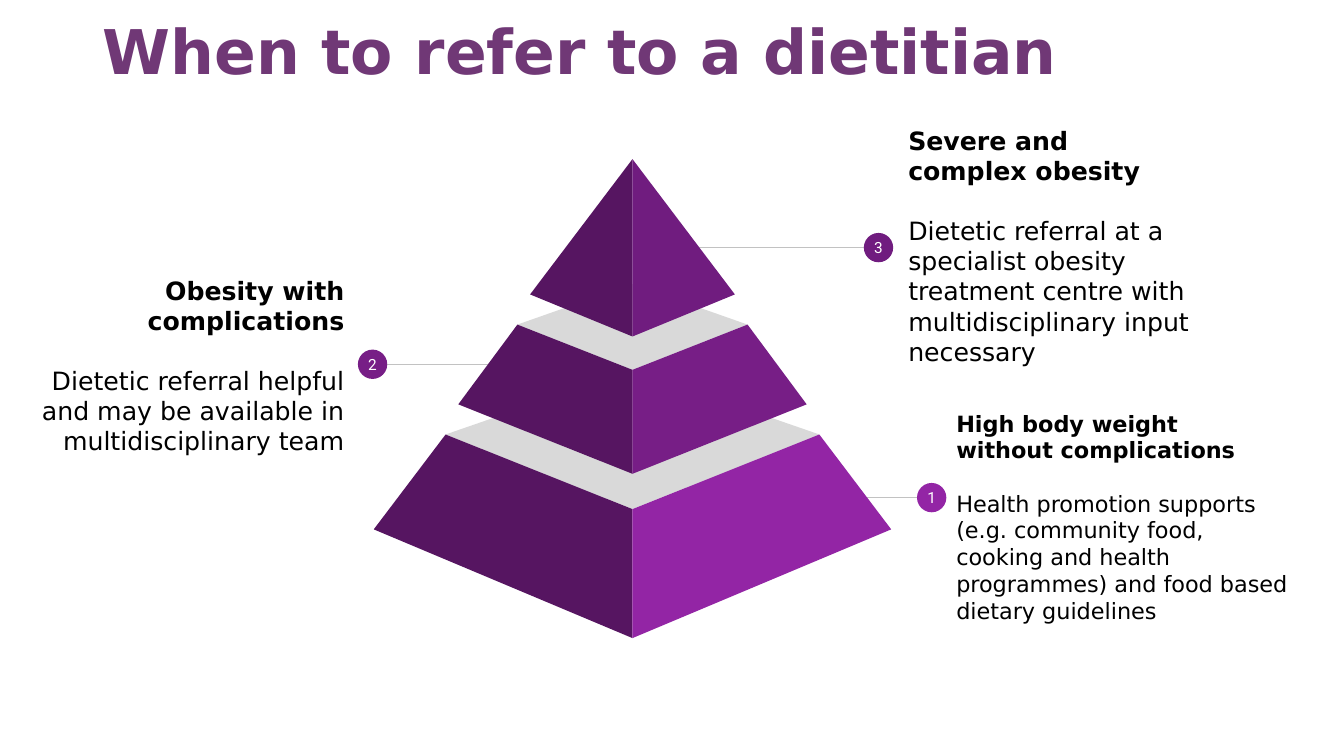
from lxml import etree
from pptx import Presentation
from pptx import util as u
from pptx.dml.color import RGBColor
from pptx.enum import shapes, text
from pptx.oxml import ns

LEFT, CENTER, RIGHT = text.PP_ALIGN.LEFT, text.PP_ALIGN.CENTER, text.PP_ALIGN.RIGHT
DARK, LID, RULE = "561561", "D9D9D9", "C2C2C2"
AXIS = 15.94  # vertical centre line of the pyramid, cm
DOT = 0.74  # diameter of a number marker, cm


def color(value):
    return RGBColor.from_string(value)


class SlideBuilder:
    body_font = "DejaVu Sans"
    number_font = "Roboto"

    def __init__(self, page):
        self.shapes = page.shapes

    def add_span(self, para, words, tone="000000", **font):
        span = para.add_run()
        span.text = words
        for key, value in {"name": self.body_font, **font}.items():
            setattr(span.font, key, value)
        span.font.color.rgb = color(tone)

    def frame(self, shape, inset_x, inset_y):
        """Set up a wrapping, vertically centred text frame."""
        box = shape.text_frame
        settings = {
            "word_wrap": True, "vertical_anchor": text.MSO_ANCHOR.MIDDLE,
            "margin_left": u.Cm(inset_x), "margin_right": u.Cm(inset_x),
            "margin_top": u.Cm(inset_y), "margin_bottom": u.Cm(inset_y),
        }
        for key, value in settings.items():
            setattr(box, key, value)
        return box

    def title(self, words, place):
        box = self.frame(self.shapes.add_textbox(*map(u.Cm, place)), 0.25, 0.13)
        para = box.paragraphs[0]
        para.line_spacing = 0.9
        self.add_span(para, words, "703876", size=u.Pt(44), bold=True)

    def label(self, heading, body, place, size, align):
        """Bold heading lines with one body paragraph a line below."""
        box = self.frame(self.shapes.add_textbox(*map(u.Cm, place)), 0.33, 0.33)
        for index, words in enumerate([*heading, body]):
            para = box.paragraphs[0] if index == 0 else box.add_paragraph()
            para.alignment = align
            is_body = index == len(heading)
            if is_body:
                para.space_before = u.Pt(size * 1.17)
            self.add_span(para, words, size=u.Pt(size), bold=not is_body)

    def line(self, start, end, y):
        rule = self.shapes.add_connector(
            shapes.MSO_CONNECTOR.STRAIGHT, u.Cm(start), u.Cm(y), u.Cm(end), u.Cm(y))
        rule.line.color.rgb = color(RULE)
        rule.line.width = u.Pt(0.75)
        etree.SubElement(rule._element.spPr, ns.qn("a:effectLst"))

    def paint(self, shape, tone):
        shape.shadow.inherit = False
        shape.fill.solid()
        shape.fill.fore_color.rgb = color(tone)
        shape.line.fill.background()

    def marker(self, number, left, top, tone):
        dot = self.shapes.add_shape(
            shapes.MSO_SHAPE.OVAL, *map(u.Cm, (left, top, DOT, DOT)))
        self.paint(dot, tone)
        box = self.frame(dot, 0, 0)
        box.word_wrap = False
        para = box.paragraphs[0]
        para.alignment = CENTER
        self.add_span(para, number, "FFFFFF", name=self.number_font, size=u.Pt(11))

    def polygon(self, points, tone):
        """Draw an outline from (offset from the axis, y) points."""
        corners = [(u.Cm(AXIS + x), u.Cm(y)) for x, y in points]
        outline = self.shapes.build_freeform(*corners[0], scale=1.0)
        outline.add_line_segments(corners[1:], close=True)
        self.paint(outline.convert_to_shape(), tone)

    def tier(self, shoulder, foot, front, inner, back, tone):
        """Draw a pyramid tier: grey lid if it has a back, then both faces."""
        x, y = shoulder
        if back is not None:
            self.polygon([(-x, y), (0, inner), (x, y), (0, back)], LID)
        for side, face in ((-1, DARK), (1, tone)):
            edge = [(side * x, y), (side * foot[0], foot[1]), (0, front)]
            if back is not None:
                edge.append((0, inner))
            self.polygon(edge, face)


# number, tone, marker left and top, line start and end, label place, size, align, texts
STAGES = [
    ("1", "9325A5", (23.11, 12.17), (21.69, 23.85), (23.77, 10.46, 9.17, 5.13), 16, LEFT,
     ["High body weight", "without complications"],
     "Health promotion supports (e.g. community food, cooking and health "
     "programmes) and food based dietary guidelines"),
    ("2", "771E86", (9.02, 8.81), (13.11, 9.25), (0.25, 6.65, 8.76, 5.13), 18, RIGHT,
     ["Obesity with complications"],
     "Dietetic referral helpful and may be available in multidisciplinary team"),
    ("3", "701C7F", (21.77, 5.87), (16.15, 22.5), (22.56, 3.63, 9.14, 5.13), 18, LEFT,
     ["Severe and", "complex obesity"],
     "Dietetic referral at a specialist obesity treatment centre with "
     "multidisciplinary input necessary"),
]

# shoulder, foot, front, inner and back of each tier, from the base up
TIERS = [
    ((4.71, 10.95), (6.52, 13.34), 16.08, 12.83, 9.32),
    ((2.9, 8.18), (4.39, 10.19), 11.94, 9.32, 7.16),
    ((0, 4.01), (2.58, 7.42), 8.48, None, None),
]


def main():
    deck = Presentation()
    deck.slide_width, deck.slide_height = u.Cm(33.87), u.Cm(19.05)
    page = deck.slides.add_slide(deck.slide_layouts[6])
    builder = SlideBuilder(page)
    builder.title("When to refer to a dietitian", (2.34, -0.46, 29.21, 3.68))
    for number, tone, (left, top), ends, place, size, align, heading, body in STAGES:
        builder.line(*ends, top + DOT / 2)
        builder.label(heading, body, place, size, align)
        builder.marker(number, left, top, tone)
    for tier, stage in zip(TIERS, STAGES):
        builder.tier(*tier, stage[1])
    deck.save("out.pptx")


if __name__ == "__main__":
    main()
